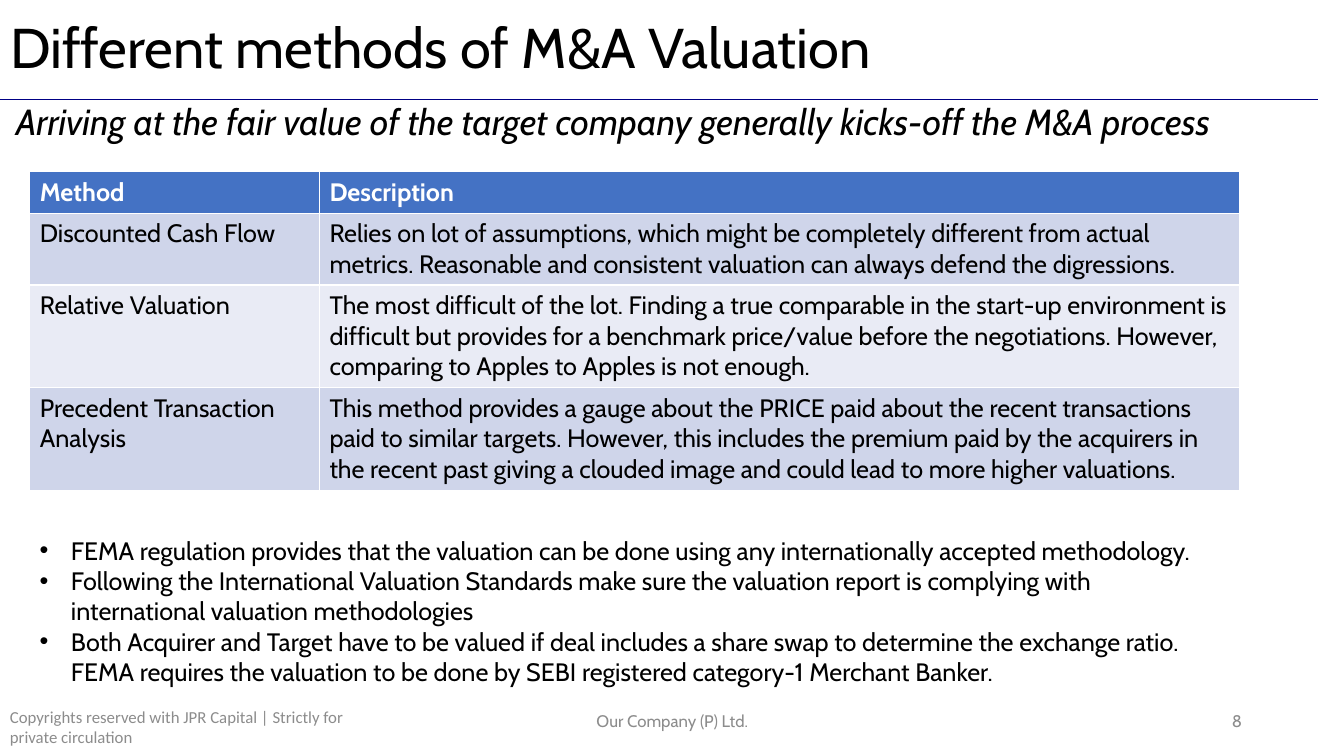
from lxml.etree import SubElement
from pptx import Presentation
from pptx.dml.color import RGBColor
from pptx.enum.shapes import MSO_CONNECTOR
from pptx.enum.text import MSO_ANCHOR, MSO_AUTO_SIZE, PP_ALIGN
from pptx.oxml.ns import qn
from pptx.util import Cm, Pt

BLACK = RGBColor(0x00, 0x00, 0x00)
WHITE = RGBColor(0xFF, 0xFF, 0xFF)
GREY = RGBColor(0x8C, 0x8C, 0x8C)
NAVY = RGBColor(0x00, 0x00, 0x85)
BLUE = RGBColor(0x44, 0x72, 0xC4)
BAND = RGBColor(0xCF, 0xD5, 0xEA)
PALE = RGBColor(0xE9, 0xEB, 0xF5)

ROWS = [
    ("Method", "Description"),
    ("Discounted Cash Flow",
     "Relies on lot of assumptions, which might be completely different from actual "
     "metrics. Reasonable and consistent valuation can always defend the digressions."),
    ("Relative Valuation",
     "The most difficult of the lot. Finding a true comparable in the start-up "
     "environment is difficult but provides for a benchmark price/value before the "
     "negotiations. However, comparing to Apples to Apples is not enough."),
    ("Precedent Transaction Analysis",
     "This method provides a gauge about the PRICE paid about the recent transactions "
     "paid to similar targets. However, this includes the premium paid by the acquirers "
     "in the recent past giving a clouded image and could lead to more higher valuations."),
]
HEIGHTS = (1.04, 1.81, 2.59, 2.59)
FILLS = (BLUE, BAND, PALE, BAND)
NOTES = [
    "FEMA regulation provides that the valuation can be done using any internationally "
    "accepted methodology.",
    "Following the International Valuation Standards make sure the valuation report is "
    "complying with international valuation methodologies",
    "Both Acquirer and Target have to be valued if deal includes a share swap to determine "
    "the exchange ratio. FEMA requires the valuation to be done by SEBI registered "
    "category-1 Merchant Banker.",
]


def style(para, size, color=BLACK, face="Cabin", bold=False, italic=False):
    for run in para.runs:
        font = run.font
        font.name, font.size = face, Pt(size)
        font.bold, font.italic = bold, italic
        font.color.rgb = color


def add_text(slide, box, anchor=MSO_ANCHOR.TOP):
    frame = slide.shapes.add_textbox(*map(Cm, box)).text_frame
    frame.word_wrap = True
    frame.vertical_anchor = anchor
    return frame


def add_head(slide, left, top, width, height):
    title = slide.shapes.title
    title.left, title.top = Cm(left), Cm(top)
    title.width, title.height = Cm(width), Cm(height)
    frame = title.text_frame
    frame.text = "Different methods of M&A Valuation"
    frame.auto_size = MSO_AUTO_SIZE.NONE
    frame.vertical_anchor = MSO_ANCHOR.MIDDLE
    para = frame.paragraphs[0]
    para.alignment = PP_ALIGN.LEFT
    para.line_spacing = 0.9
    style(para, 40)

    base = Cm(top + height)
    rule = slide.shapes.add_connector(MSO_CONNECTOR.STRAIGHT, Cm(left), base, Cm(33.22), base)
    rule.line.color.rgb = NAVY
    rule.line.width = Pt(0.5)
    SubElement(rule._element.spPr, qn("a:effectLst"))

    frame = add_text(slide, (left + 0.15, top + height, 33.86, 1.8))
    frame.text = "Arriving at the fair value of the target company generally kicks-off the M&A process"
    para = frame.paragraphs[0]
    para.line_spacing = 0.9
    style(para, 25.9, italic=True)


def add_grid(slide, left, top, width):
    shape = slide.shapes.add_table(len(ROWS), 2, Cm(left), Cm(top), Cm(width), Cm(sum(HEIGHTS)))
    table = shape.table
    first = 7.3
    table.columns[0].width = Cm(first)
    table.columns[1].width = Cm(width - first)
    for i, (texts, height, fill) in enumerate(zip(ROWS, HEIGHTS, FILLS)):
        table.rows[i].height = Cm(height)
        for cell, text in zip(table.rows[i].cells, texts):
            cell.text = text
            cell.fill.solid()
            cell.fill.fore_color.rgb = fill
            style(cell.text_frame.paragraphs[0], 18, BLACK if i else WHITE, bold=not i)


def add_notes(slide, left, top, width, height):
    frame = add_text(slide, (left, top, width, height))
    frame.text = "\n".join(NOTES)
    for para in frame.paragraphs:
        props = para._p.get_or_add_pPr()
        props.set("marL", str(Cm(0.79)))
        props.set("indent", str(-Cm(0.79)))
        SubElement(props, qn("a:buFont"), typeface="Arial")
        SubElement(props, qn("a:buChar"), char="•")
        style(para, 18)


def add_foot(slide, left, top):
    parts = [
        ("Copyrights reserved with JPR Capital | Strictly for private circulation",
         0, 9.96, 1.35, PP_ALIGN.LEFT, "Calibri"),
        ("Our Company (P) Ltd.", 11.23, 11.43, 1.02, PP_ALIGN.CENTER, "Cabin"),
        ("8", 23.93, 7.62, 1.02, PP_ALIGN.RIGHT, "Cabin"),
    ]
    for text, shift, width, height, align, face in parts:
        frame = add_text(slide, (left + shift, top, width, height), MSO_ANCHOR.MIDDLE)
        frame.text = text
        para = frame.paragraphs[0]
        para.alignment = align
        style(para, 12, GREY, face)


def main():
    deck = Presentation()
    deck.slide_width, deck.slide_height = Cm(33.87), Cm(19.05)
    slide = deck.slides.add_slide(deck.slide_layouts[5])
    add_head(slide, 0, 0.05, 29.21, 2.46)
    add_grid(slide, 0.75, 4.33, 30.48)
    add_notes(slide, 0.75, 13.36, 30.48, 4.11)
    add_foot(slide, 0, 17.65)
    deck.save("out.pptx")


if __name__ == "__main__":
    main()
